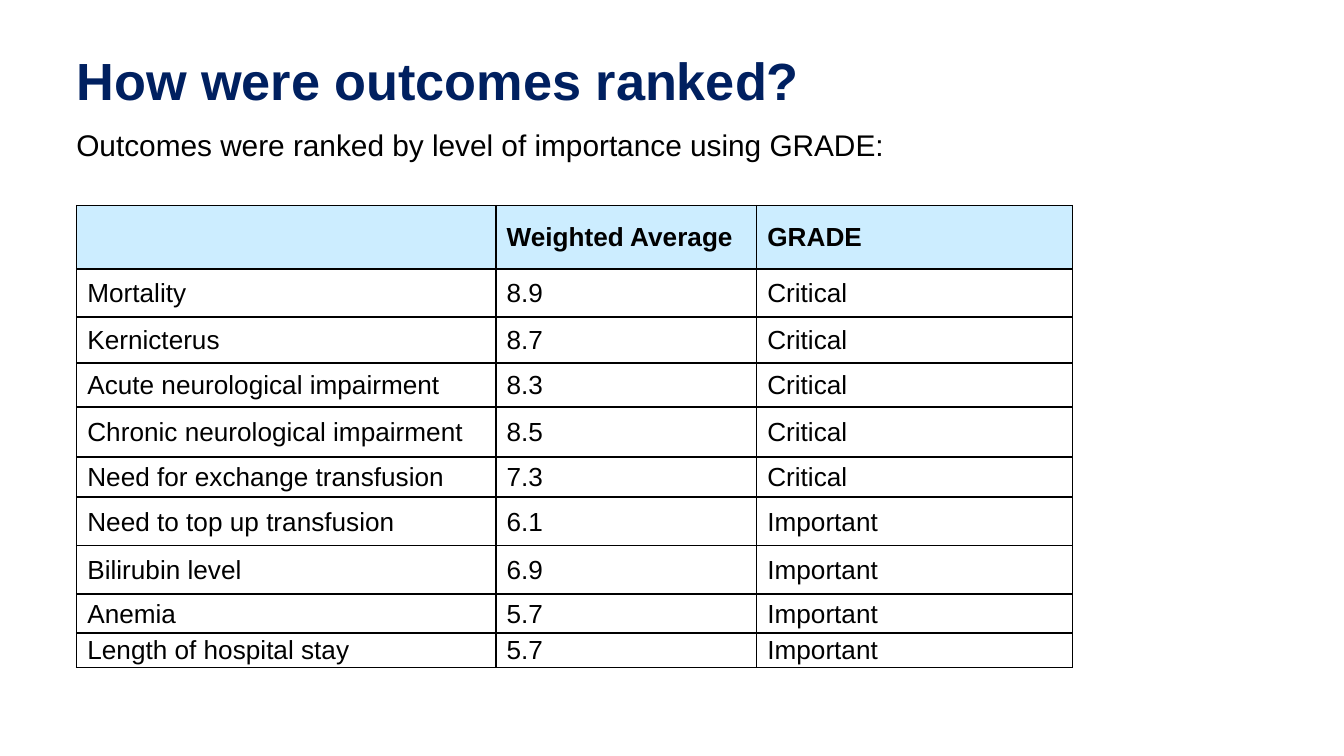
from dataclasses import dataclass

from lxml import etree
from pptx import Presentation
from pptx.dml.color import RGBColor
from pptx.enum.text import MSO_ANCHOR
from pptx.oxml.ns import qn
from pptx.util import Inches, Pt

MIDDLE = MSO_ANCHOR.MIDDLE
FONT = "Arial"
BLACK = "000000"
NAVY = "002060"
WHITE = "FFFFFF"
HEADER_BLUE = "CCEDFF"
SLIDE_WIDTH = 10
COLUMN_WIDTHS = (3.12, 1.94, 2.35)
HEADINGS = ("", "Weighted Average", "GRADE")
HEADER_HEIGHT = 0.47


@dataclass
class TextItem:
    text: str
    left: float
    top: float
    width: float
    height: float
    size: int
    color: str
    bold: bool = False
    side_inset: float = 0
    top_inset: float = 0


@dataclass
class Outcome:
    name: str
    average: str
    grade: str
    height: float


TEXTS = (
    TextItem("How were outcomes ranked?", 0.57, 0.36, 8.49, 1.11, 28, NAVY, True),
    TextItem("Outcomes were ranked by level of importance using GRADE:",
             0.47, 0.89, 9.37, 0.64, 16, BLACK, False, 0.1, 0.05),
)

OUTCOMES = (
    Outcome("Mortality", "8.9", "Critical", 0.36),
    Outcome("Kernicterus", "8.7", "Critical", 0.34),
    Outcome("Acute neurological impairment", "8.3", "Critical", 0.33),
    Outcome("Chronic neurological impairment", "8.5", "Critical", 0.37),
    Outcome("Need for exchange transfusion", "7.3", "Critical", 0.3),
    Outcome("Need to top up transfusion", "6.1", "Important", 0.36),
    Outcome("Bilirubin level", "6.9", "Important", 0.36),
    Outcome("Anemia", "5.7", "Important", 0.29),
    Outcome("Length of hospital stay", "5.7", "Important", 0.26),
)


def rgb(color: str) -> RGBColor:
    return RGBColor.from_string(color)


def format_text(text_frame, size: int, color: str, bold: bool) -> None:
    for paragraph in text_frame.paragraphs:
        for item in (paragraph, *paragraph.runs):
            item.font.name = FONT
            item.font.size = Pt(size)
            item.font.bold = bold
            item.font.color.rgb = rgb(color)


def add_text(slide, item: TextItem) -> None:
    shape = slide.shapes.add_textbox(Inches(item.left), Inches(item.top),
                                     Inches(item.width), Inches(item.height))
    text_frame = shape.text_frame
    text_frame.word_wrap = True
    text_frame.margin_left = text_frame.margin_right = Inches(item.side_inset)
    text_frame.margin_top = text_frame.margin_bottom = Inches(item.top_inset)
    text_frame.text = item.text
    format_text(text_frame, item.size, item.color, item.bold)


def set_borders(cell, color: str, width: float) -> None:
    properties = cell._tc.get_or_add_tcPr()
    for position, side in enumerate(("a:lnL", "a:lnR", "a:lnT", "a:lnB")):
        line = etree.Element(qn(side), w=str(Pt(width)))
        fill = etree.SubElement(line, qn("a:solidFill"))
        etree.SubElement(fill, qn("a:srgbClr"), val=color)
        properties.insert(position, line)


def fill_cell(cell, text: str, fill: str, bold: bool) -> None:
    cell.text_frame.text = text
    cell.vertical_anchor = MIDDLE
    cell.margin_left = cell.margin_right = Inches(0.08)
    cell.margin_top = Inches(0.01)
    cell.margin_bottom = 0
    cell.fill.solid()
    cell.fill.fore_color.rgb = rgb(fill)
    format_text(cell.text_frame, 14, BLACK, bold)
    set_borders(cell, BLACK, 1)


def add_outcome_table(slide) -> None:
    heights = [HEADER_HEIGHT] + [outcome.height for outcome in OUTCOMES]
    rows = [HEADINGS] + [(outcome.name, outcome.average, outcome.grade)
                         for outcome in OUTCOMES]
    table = slide.shapes.add_table(
        len(rows), len(COLUMN_WIDTHS), Inches(0.57), Inches(1.53),
        Inches(sum(COLUMN_WIDTHS)), Inches(sum(heights))).table
    table.horz_banding = False
    for column, width in zip(table.columns, COLUMN_WIDTHS):
        column.width = Inches(width)
    for index, (row, height, values) in enumerate(zip(table.rows, heights, rows)):
        row.height = Inches(height)
        is_header = index == 0
        for cell, value in zip(row.cells, values):
            fill_cell(cell, value, HEADER_BLUE if is_header else WHITE, is_header)


def main() -> None:
    presentation = Presentation()
    presentation.slide_width = Inches(SLIDE_WIDTH)
    presentation.slide_height = Inches(SLIDE_WIDTH * 9 / 16)
    slide = presentation.slides.add_slide(presentation.slide_layouts[6])
    add_outcome_table(slide)
    for item in TEXTS:
        add_text(slide, item)
    presentation.save("out.pptx")


if __name__ == "__main__":
    main()
